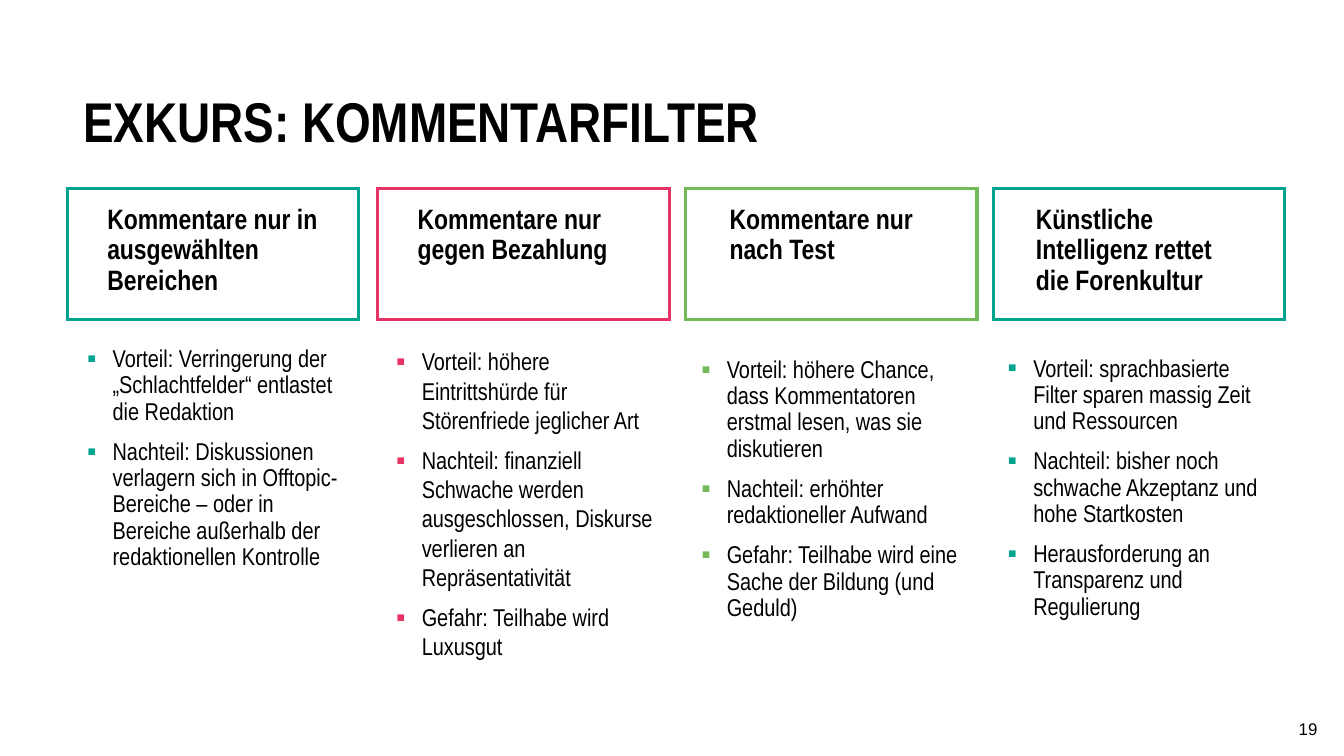
from dataclasses import dataclass

import pptx
import pptx.dml.color
import pptx.enum.shapes
import pptx.enum.text
import pptx.oxml
import pptx.oxml.ns
import pptx.util

PX = 9144  # EMU per px, 100 px to the inch


@dataclass(frozen=True)
class Theme:
    text: str = "000000"
    teal: str = "00A48F"
    pink: str = "E63264"
    green: str = "73B95A"
    font: str = "Arial Narrow"
    number_font: str = "Arial"
    title_size: int = 30
    heading_size: int = 15
    bullet_size: int = 13
    number_size: int = 9
    frame_width: float = 1.75


THEME = Theme()


@dataclass(frozen=True)
class Column:
    """Offsets are in px, relative to the top left corner of the column."""
    left: int
    color: str
    heading: str
    bullets: tuple
    heading_dx: int
    bullets_dx: int
    bullets_dy: int
    line_spacing: float = 0.9
    space_before: float = 7.5
    space_after: float = 0


COLUMNS = (
    Column(50, THEME.teal, "Kommentare nur in ausgewählten Bereichen", (
        "Vorteil: Verringerung der „Schlachtfelder“ entlastet die Redaktion",
        "Nachteil: Diskussionen verlagern sich in Offtopic-Bereiche – oder in "
        "Bereiche außerhalb der redaktionellen Kontrolle",
    ), 0, 4, 113),
    Column(281, THEME.pink, "Kommentare nur gegen Bezahlung", (
        "Vorteil: höhere Eintrittshürde für Störenfriede jeglicher Art",
        "Nachteil: finanziell Schwache werden ausgeschlossen, Diskurse "
        "verlieren an Repräsentativität",
        "Gefahr: Teilhabe wird Luxusgut",
    ), 0, 3, 113, line_spacing=1.0, space_before=0, space_after=6),
    Column(510, THEME.green, "Kommentare nur nach Test", (
        "Vorteil: höhere Chance, dass Kommentatoren erstmal lesen, was sie "
        "diskutieren",
        "Nachteil: erhöhter redaktioneller Aufwand",
        "Gefahr: Teilhabe wird eine Sache der Bildung (und Geduld)",
    ), 3, 1, 121),
    Column(739, THEME.teal, "Künstliche Intelligenz rettet \vdie Forenkultur", (
        "Vorteil: sprachbasierte Filter sparen massig Zeit und Ressourcen",
        "Nachteil: bisher noch schwache Akzeptanz und hohe Startkosten",
        "Herausforderung an Transparenz und Regulierung",
    ), 2, 0, 120),
)
COLUMN_TOP, COLUMN_WIDTH = 140, 217
INDENT, HANGING = 20, 19


def emu(*lengths):
    return [pptx.util.Emu(length * PX) for length in lengths]


def rgb(color):
    return pptx.dml.color.RGBColor.from_string(color)


def set_font(paragraph, size, bold=False, name=THEME.font):
    font = paragraph.font
    font.name, font.bold = name, bold
    font.size = pptx.util.Pt(size)
    font.color.rgb = rgb(THEME.text)


def add_text_frame(slide, left, top, width, height):
    frame = slide.shapes.add_textbox(*emu(left, top, width, height)).text_frame
    frame.word_wrap = True
    return frame


def set_indent(paragraph, hanging=0):
    properties = paragraph._p.get_or_add_pPr()
    properties.set("marL", str(INDENT * PX))
    properties.set("indent", str(-hanging * PX))
    return properties


def add_square_bullet(paragraph, color):
    properties = set_indent(paragraph, HANGING)
    namespace = pptx.oxml.ns.nsdecls("a")
    for element in (
        f'<a:buClr {namespace}><a:srgbClr val="{color}"/></a:buClr>',
        f'<a:buSzPct {namespace} val="110000"/>',
        f'<a:buFont {namespace} typeface="{THEME.number_font}"/>',
        f'<a:buChar {namespace} char="▪"/>',
    ):
        properties.append(pptx.oxml.parse_xml(element))


def add_title(slide, left, top, width, height):
    title = add_text_frame(slide, left, top, width, height).paragraphs[0]
    title.text = "EXKURS: KOMMENTARFILTER"
    title.line_spacing = pptx.util.Pt(38.4)
    set_font(title, THEME.title_size, bold=True)


def add_heading(slide, column, left, top, width):
    frame = slide.shapes.add_shape(
        pptx.enum.shapes.MSO_SHAPE.RECTANGLE, *emu(left, top, width, 98))
    frame.shadow.inherit = False
    frame.fill.background()
    frame.line.color.rgb = rgb(column.color)
    frame.line.width = pptx.util.Pt(THEME.frame_width)
    namespace = pptx.oxml.ns.nsdecls("a")
    frame.line._get_or_add_ln().append(
        pptx.oxml.parse_xml(f'<a:miter {namespace} lim="800000"/>'))

    heading = add_text_frame(
        slide, left + column.heading_dx, top + 8, width - 3, 82).paragraphs[0]
    heading.text = column.heading
    set_indent(heading)
    heading.line_spacing = 0.9
    set_font(heading, THEME.heading_size, bold=True)


def add_bullets(slide, column, left, top, width):
    frame = add_text_frame(slide, left, top, width, 245)
    for index, bullet in enumerate(column.bullets):
        paragraph = frame.add_paragraph() if index else frame.paragraphs[0]
        paragraph.text = bullet
        add_square_bullet(paragraph, column.color)
        paragraph.line_spacing = column.line_spacing
        if index:
            paragraph.space_before = pptx.util.Pt(column.space_before)
        paragraph.space_after = pptx.util.Pt(column.space_after)
        set_font(paragraph, THEME.bullet_size)


def add_column(slide, column, left, top, width):
    add_heading(slide, column, left, top, width)
    add_bullets(slide, column, left + column.bullets_dx,
                top + column.bullets_dy, width - 3)


def add_slide_number(slide, left, top, width, height):
    frame = add_text_frame(slide, left, top, width, height)
    frame.vertical_anchor = pptx.enum.text.MSO_ANCHOR.MIDDLE
    number = frame.paragraphs[0]
    number.text = "19"
    number.alignment = pptx.enum.text.PP_ALIGN.RIGHT
    set_font(number, THEME.number_size, name=THEME.number_font)


def main():
    presentation = pptx.Presentation()
    slide_width, = emu(1000)
    presentation.slide_width = slide_width
    presentation.slide_height = pptx.util.Emu(slide_width * 9 // 16)
    slide = presentation.slides.add_slide(presentation.slide_layouts[6])
    add_title(slide, 52, 56, 786, 59)
    for column in COLUMNS:
        add_column(slide, column, column.left, COLUMN_TOP, COLUMN_WIDTH)
    add_slide_number(slide, 931, 527, 59, 30)
    presentation.save("out.pptx")


if __name__ == "__main__":
    main()
